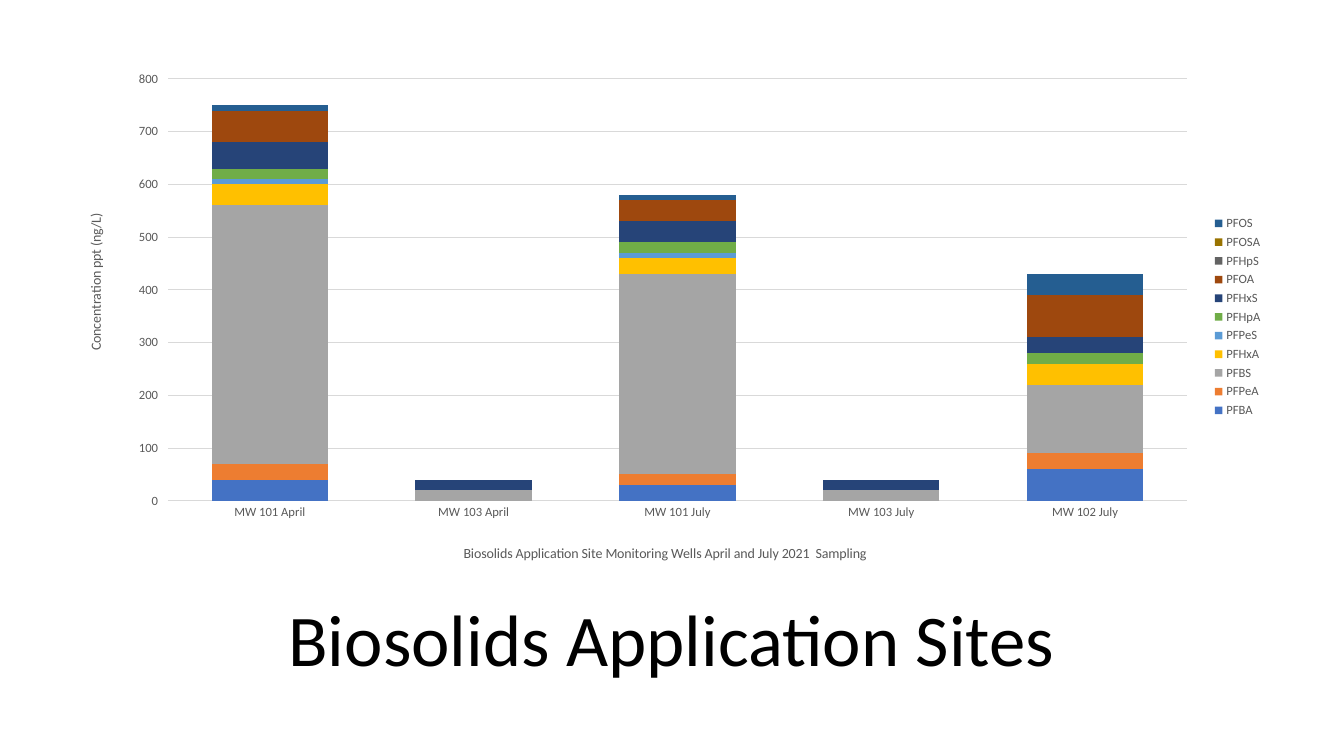
import pptx
import pptx.chart.data
import pptx.dml.color
import pptx.enum.chart
import pptx.enum.text
import pptx.oxml
import pptx.oxml.ns
import pptx.util

RGBColor = pptx.dml.color.RGBColor
PX = pptx.util.Inches(1) / 100.8
FONT = "Calibri"
BLACK = RGBColor(0x00, 0x00, 0x00)
TEXT_GREY = RGBColor(0x59, 0x59, 0x59)
GRID_GREY = RGBColor(0xD9, 0xD9, 0xD9)

CHART_BOX = (71, 62, 1202, 510)
TITLE_BOX = (92, 591, 1159, 104)
PLOT_BOX = (168, 79, 1019, 422)
CATEGORY_TITLE_BOX = (461, 542)
VALUE_TITLE_BOX = (84, 211)

WELLS = ["MW 101 April", "MW 103 April", "MW 101 July", "MW 103 July", "MW 102 July"]
COMPOUNDS = [
    ("PFBA", RGBColor(0x44, 0x72, 0xC4), (40, 0, 30, 0, 60)),
    ("PFPeA", RGBColor(0xED, 0x7D, 0x31), (30, 0, 20, 0, 30)),
    ("PFBS", RGBColor(0xA5, 0xA5, 0xA5), (490, 20, 380, 20, 130)),
    ("PFHxA", RGBColor(0xFF, 0xC0, 0x00), (40, 0, 30, 0, 40)),
    ("PFPeS", RGBColor(0x5B, 0x9B, 0xD5), (10, 0, 10, 0, 0)),
    ("PFHpA", RGBColor(0x70, 0xAD, 0x47), (20, 0, 20, 0, 20)),
    ("PFHxS", RGBColor(0x26, 0x44, 0x78), (50, 20, 40, 20, 30)),
    ("PFOA", RGBColor(0x9E, 0x48, 0x0E), (60, 0, 40, 0, 80)),
    ("PFHpS", RGBColor(0x63, 0x63, 0x63), (0, 0, 0, 0, 0)),
    ("PFOSA", RGBColor(0x99, 0x73, 0x00), (0, 0, 0, 0, 0)),
    ("PFOS", RGBColor(0x25, 0x5E, 0x91), (10, 0, 10, 0, 40)),
]


def px(length):
    return round(length * PX)


def set_format(target, values):
    for name, value in values.items():
        setattr(target, name, value)


def set_font(font, size, color):
    set_format(font, {"name": FONT, "size": pptx.util.Pt(size), "bold": False})
    font.color.rgb = color


def set_line(line, color):
    line.color.rgb = color
    line.width = pptx.util.Pt(0.75)


def place_in_chart(element, index, box, inner=False):
    """Fix a chart part at a slide position, as child number index of element."""
    for old_layout in element.findall(pptx.oxml.ns.qn("c:layout")):
        element.remove(old_layout)
    left, top, width, height = CHART_BOX
    fractions = [(box[0] - left) / width, (box[1] - top) / height]
    fractions += [length / whole for length, whole in zip(box[2:], (width, height))]
    target = '<c:layoutTarget val="inner"/>' if inner else ""
    modes = '<c:xMode val="edge"/><c:yMode val="edge"/>'
    sizes = "".join(
        f'<c:{name} val="{value:.4f}"/>' for name, value in zip("xywh", fractions)
    )
    element.insert(index, pptx.oxml.parse_xml(
        f'<c:layout {pptx.oxml.ns.nsdecls("c")}><c:manualLayout>'
        f"{target}{modes}{sizes}</c:manualLayout></c:layout>"
    ))


def style_axis(axis, title, title_box, values):
    set_format(axis, values)
    set_font(axis.tick_labels.font, 9, TEXT_GREY)
    paragraph = axis.axis_title.text_frame.paragraphs[0]
    run = paragraph.add_run()
    run.text = title
    set_font(run.font, 10, TEXT_GREY)
    place_in_chart(paragraph._p.getparent().getparent().getparent(), 1, title_box)


def add_concentration_chart(slide):
    data = pptx.chart.data.CategoryChartData(number_format="#,##0")
    data.categories = WELLS
    for name, _, values in COMPOUNDS:
        data.add_series(name, values)
    chart = slide.shapes.add_chart(
        pptx.enum.chart.XL_CHART_TYPE.COLUMN_STACKED, *map(px, CHART_BOX), data
    ).chart
    set_format(chart, {"has_title": False, "has_legend": True})
    set_font(chart.font, 10, BLACK)

    plot = chart.plots[0]
    set_format(plot, {"gap_width": 75, "overlap": 100, "vary_by_categories": False})
    for series, (_, color, _) in zip(plot.series, COMPOUNDS):
        series.format.fill.solid()
        series.format.fill.fore_color.rgb = color

    no_tick = pptx.enum.chart.XL_TICK_MARK.NONE
    style_axis(
        chart.category_axis,
        "Biosolids Application Site Monitoring Wells April and July 2021  Sampling",
        CATEGORY_TITLE_BOX,
        {"major_tick_mark": no_tick, "has_major_gridlines": False},
    )
    set_line(chart.category_axis.format.line, GRID_GREY)
    style_axis(
        chart.value_axis,
        "Concentration ppt (ng/L)",
        VALUE_TITLE_BOX,
        {"minimum_scale": 0, "maximum_scale": 800, "major_unit": 100,
         "major_tick_mark": pptx.enum.chart.XL_TICK_MARK.OUTSIDE},
    )
    chart.value_axis.format.line.fill.background()
    set_line(chart.value_axis.major_gridlines.format.line, GRID_GREY)

    set_format(chart.legend, {
        "position": pptx.enum.chart.XL_LEGEND_POSITION.RIGHT,
        "include_in_layout": False,
    })
    set_font(chart.legend.font, 9, TEXT_GREY)
    plot_area = chart.category_axis._element.getparent()
    place_in_chart(plot_area, 0, PLOT_BOX, inner=True)


def add_slide_title(slide, text):
    frame = slide.shapes.add_textbox(*map(px, TITLE_BOX)).text_frame
    set_format(frame, {
        "word_wrap": True,
        "vertical_anchor": pptx.enum.text.MSO_ANCHOR.MIDDLE,
    })
    paragraph = frame.paragraphs[0]
    set_format(paragraph, {
        "alignment": pptx.enum.text.PP_ALIGN.CENTER,
        "line_spacing": 0.9,
    })
    run = paragraph.add_run()
    run.text = text
    set_font(run.font, 52, BLACK)


def main():
    presentation = pptx.Presentation()
    set_format(presentation, {"slide_width": px(1344), "slide_height": px(756)})
    slide = presentation.slides.add_slide(presentation.slide_layouts[6])
    add_slide_title(slide, "Biosolids Application Sites")
    add_concentration_chart(slide)
    presentation.save("out.pptx")


if __name__ == "__main__":
    main()
